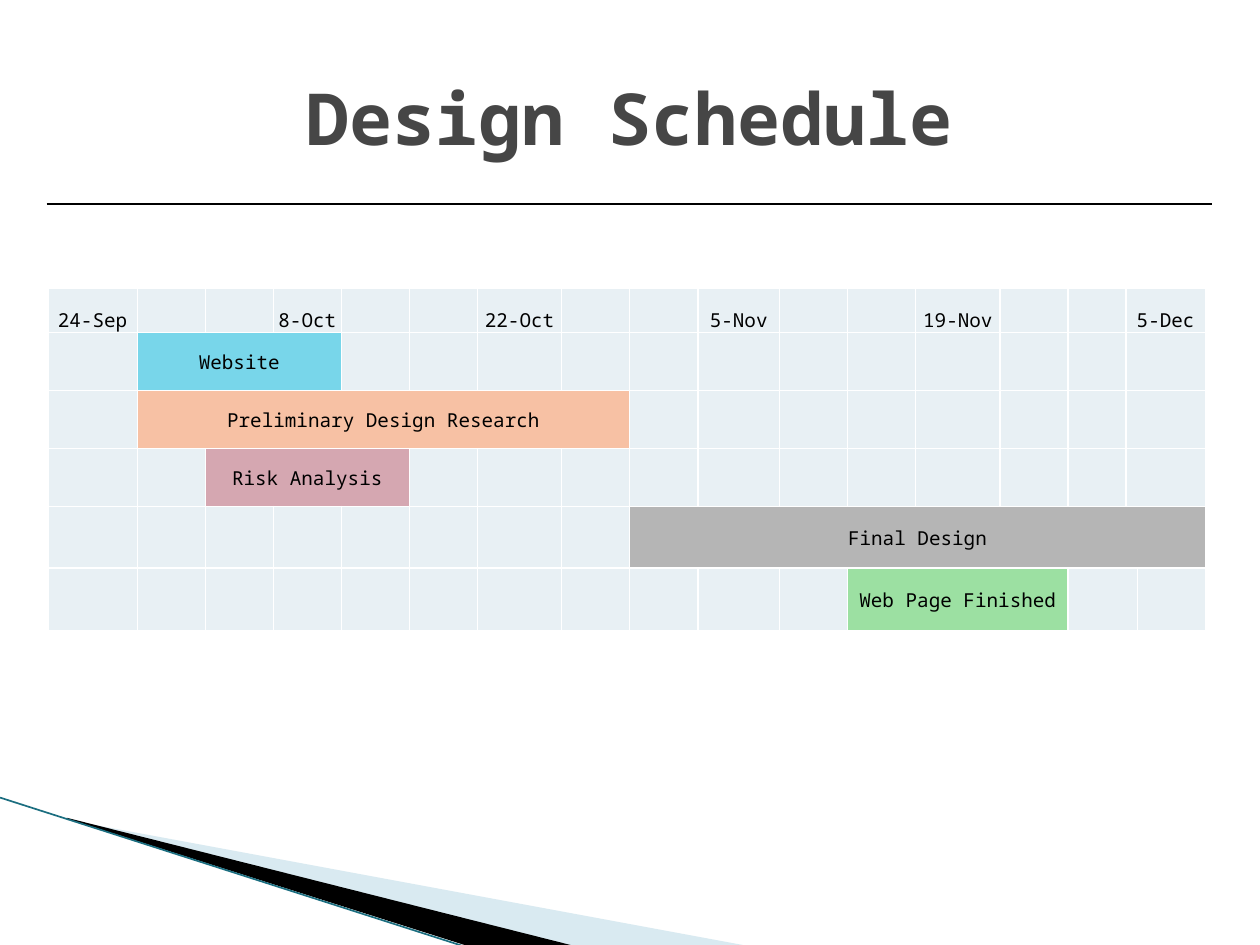
"""Build the Design Schedule slide: a title, a Gantt table and corner wedges."""
from lxml.etree import SubElement
from pptx import Presentation
from pptx.dml.color import RGBColor as RGB
from pptx.enum.shapes import MSO_CONNECTOR as CONN
from pptx.enum.text import MSO_ANCHOR as ANCHOR, PP_ALIGN as ALIGN
from pptx.oxml.ns import qn
from pptx.util import Inches, Pt

FONT = "Noto Sans Mono"
HUES = {
    "ink": "000000", "title": "464646", "grid": "FFFFFF", "cell": "E8F0F4",
    "site": "78D6EA", "study": "F7C1A4", "risk": "D5A7B1",
    "final": "B5B5B5", "done": "9CE0A2", "pale": "A0CBDC", "edge": "1B6E80",
}
COLS = [0.71, 0.54, 0.54, 0.54, 0.54, 0.54, 0.67, 0.54, 0.54, 0.65,
        0.54, 0.54, 0.67, 0.54, 0.46, 0.09, 0.54]
ROWS = [0.35, 0.46, 0.46, 0.46, 0.49, 0.5]
DATES = ["24-Sep", "8-Oct", "22-Oct", "5-Nov", "19-Nov", "5-Dec"]
TASKS = [
    ("Website", 1, 3, "site"),
    ("Preliminary Design Research", 1, 7, "study"),
    ("Risk Analysis", 2, 3, "risk"),
    ("Final Design", 8, 9, "final"),
    ("Web Page Finished", 11, 3, "done"),
]
PAIRS = [(0, 15), (1, 15), (2, 15), (3, 15), (5, 14)]
WEDGES = [
    ([(0.55, 6.51), (5.95, 7.51), (4.56, 7.51), (0.55, 6.5)], "pale", 40),
    ([(0.53, 6.49), (4.57, 7.51), (3.72, 7.51), (0.54, 6.5)], "ink", 100),
]
LINES = [((0, 6.33), (3.71, 7.52), "edge", 0.95),
         ((0.37, 1.62), (9.62, 1.62), "ink", 1)]
PAD = {"margin_left": Inches(0.01), "margin_right": Inches(0.01),
       "margin_top": Inches(0.01), "margin_bottom": 0}


def hue(name):
    return RGB.from_string(HUES[name])


def paint(fill, name):
    fill.solid()
    fill.fore_color.rgb = hue(name)


def style(item, vals):
    for key, val in vals.items():
        setattr(item, key, val)


def write(frame, text, size, name, bold=False):
    para = frame.paragraphs[0]
    para.alignment = ALIGN.CENTER
    run = para.add_run()
    run.text = text
    style(run.font, {"name": FONT, "size": Pt(size), "bold": bold})
    run.font.color.rgb = hue(name)


def wedge(slide, pts, name, alpha):
    spots = [(Inches(x), Inches(y)) for x, y in pts]
    form = slide.shapes.build_freeform(*spots[0], scale=1.0)
    form.add_line_segments(spots[1:], close=True)
    shape = form.convert_to_shape()
    shape.shadow.inherit = False
    shape.line.fill.background()
    paint(shape.fill, name)
    if alpha < 100:
        tint = shape.fill._xPr.find(".//" + qn("a:srgbClr"))
        SubElement(tint, qn("a:alpha"), val=str(alpha * 1000))


def rule(slide, start, end, name, width):
    ends = [Inches(n) for n in start + end]
    line = slide.shapes.add_connector(CONN.STRAIGHT, *ends)
    line.line.width = Pt(width)
    line.line.color.rgb = hue(name)
    SubElement(line._element.spPr, qn("a:effectLst"))


def frame_cell(cell):
    props = cell._tc.get_or_add_tcPr()
    for side in "LRTB":
        edge = SubElement(props, qn("a:ln" + side), w=str(Pt(1)))
        fill = SubElement(edge, qn("a:solidFill"))
        SubElement(fill, qn("a:srgbClr"), val=HUES["grid"])


def label(cell, text, anchor):
    cell.vertical_anchor = anchor
    write(cell.text_frame, text, 11, "ink")


def chart(slide):
    size = [Inches(n) for n in (0.38, 2.29, sum(COLS), sum(ROWS))]
    table = slide.shapes.add_table(len(ROWS), len(COLS), *size).table
    style(table, {"first_row": False, "horz_banding": False})
    for col, width in zip(table.columns, COLS):
        col.width = Inches(width)
    for row, height in zip(table.rows, ROWS):
        row.height = Inches(height)
    for cell in table.iter_cells():
        style(cell, PAD)
        frame_cell(cell)
        paint(cell.fill, "cell")
    for row, col in PAIRS:
        table.cell(row, col).merge(table.cell(row, col + 1))
    for i, date in enumerate(DATES):
        label(table.cell(0, 3 * i), date, ANCHOR.BOTTOM)
    for row, (text, col, span, name) in enumerate(TASKS, 1):
        cell = table.cell(row, col)
        cell.merge(table.cell(row, col + span - 1))
        paint(cell.fill, name)
        label(cell, text, ANCHOR.MIDDLE)


def main():
    deck = Presentation()
    style(deck, {"slide_width": Inches(10), "slide_height": Inches(7.5)})
    slide = deck.slides.add_slide(deck.slide_layouts[6])
    for args in WEDGES:
        wedge(slide, *args)
    for args in LINES:
        rule(slide, *args)
    box = slide.shapes.add_textbox(*[Inches(n) for n in (0.5, 0.3, 9, 1.25)])
    style(box.text_frame, {"word_wrap": True, "vertical_anchor": ANCHOR.MIDDLE})
    write(box.text_frame, "Design Schedule", 41, "title", True)
    chart(slide)
    deck.save("out.pptx")


if __name__ == "__main__":
    main()
